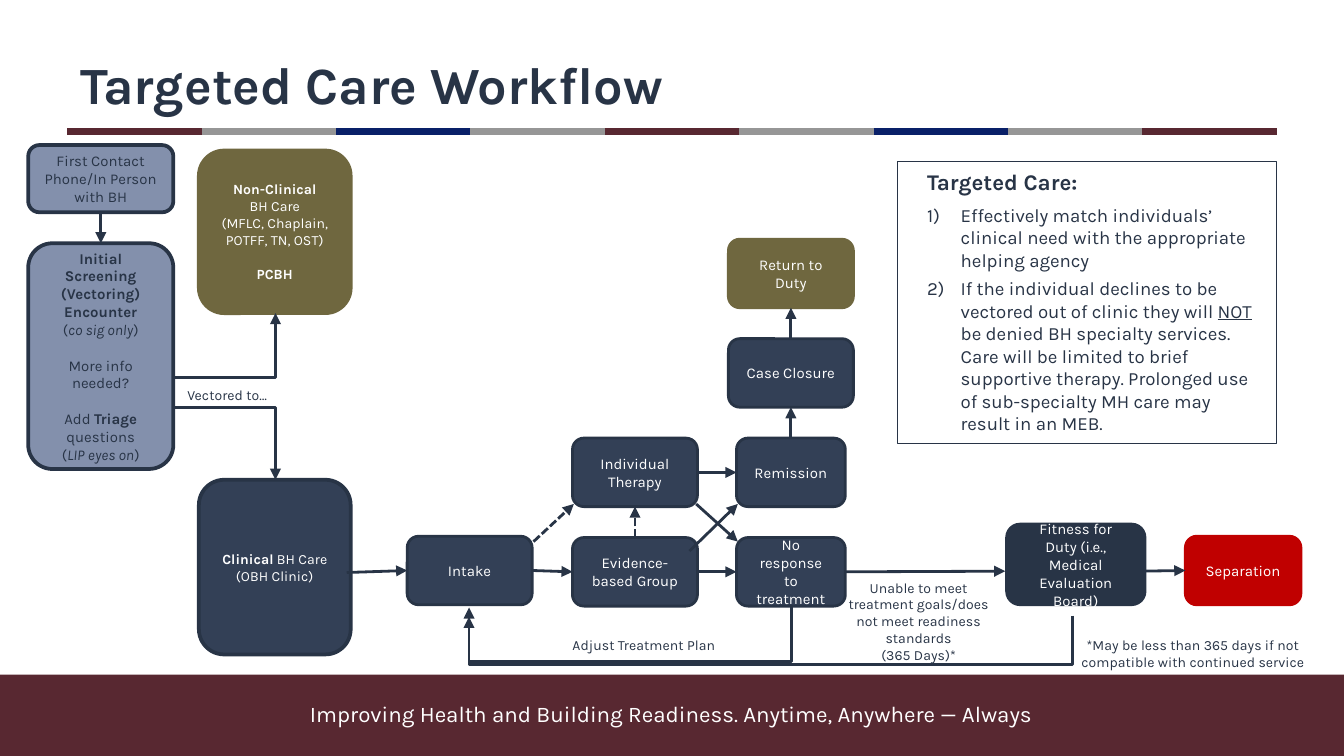
"""Build the Targeted Care Workflow slide."""
from dataclasses import dataclass, field
from itertools import cycle, islice
from typing import Any, Optional, Union

from lxml.etree import SubElement
from pptx import Presentation
from pptx.dml.color import RGBColor
from pptx.enum.dml import MSO_LINE
from pptx.enum.shapes import MSO_CONNECTOR, MSO_SHAPE
from pptx.enum.text import MSO_ANCHOR, PP_ALIGN
from pptx.oxml.ns import qn
from pptx.util import Pt

PX = 9144
FONT = "Karla"
WHITE, INK, NAVY, STEEL = "FFFFFF", "283446", "334056", "8390AC"
OLIVE, MAROON, GRAY, BLUE, RED = "6F673F", "582831", "969696", "092068", "C00000"
TOP, LEFT, BOTTOM, RIGHT = range(4)
BOLD, ITALIC, UNDERLINE = {"bold": True}, {"italic": True}, {"underline": True}
Rect = tuple[int, int, int, int]
Anchor = tuple[Union[str, int], int]


@dataclass
class Span:
    text: str
    style: dict[str, Any] = field(default_factory=dict)


@dataclass
class Line:
    spans: list[Span]
    gap: float = 0
    left: int = 0
    indent: int = 0
    numbered: bool = False


@dataclass
class Box:
    rect: Rect
    lines: list[Line]
    fill: Optional[str] = NAVY
    border: str = INK
    weight: float = 1.5
    color: str = WHITE
    size: float = 8
    kind: MSO_SHAPE = MSO_SHAPE.ROUNDED_RECTANGLE
    align: PP_ALIGN = PP_ALIGN.CENTER
    anchor: MSO_ANCHOR = MSO_ANCHOR.MIDDLE


@dataclass
class Arrow:
    start: Anchor
    end: Anchor
    dashed: bool = False


@dataclass
class Loop:
    start: tuple[int, int]
    end_x: int
    floor: int


def rgb(value: str) -> RGBColor:
    return RGBColor.from_string(value)


def px(*values: float) -> list[int]:
    return [round(value * PX) for value in values]


def plain(*texts: str) -> list[Line]:
    return [Line([Span(text)]) for text in texts]


def write(frame, lines: list[Line], size: float, color: str, align: PP_ALIGN, anchor: MSO_ANCHOR) -> None:
    for key, value in {"word_wrap": True, "vertical_anchor": anchor}.items():
        setattr(frame, key, value)
    for index, line in enumerate(lines):
        paragraph = frame.add_paragraph() if index else frame.paragraphs[0]
        props = paragraph._p.get_or_add_pPr()
        if line.left:
            left, indent = px(line.left, line.indent)
            props.set("marL", str(left))
            props.set("indent", str(indent))
        if line.gap:
            paragraph.space_before = Pt(line.gap)
        if line.numbered:
            SubElement(props, qn("a:buFont"), typeface="+mj-lt")
            SubElement(props, qn("a:buAutoNum"), type="arabicParenR")
        paragraph.alignment = align
        for span in line.spans:
            run = paragraph.add_run()
            run.text = span.text
            style = {"name": FONT, "size": Pt(size), "bold": False} | span.style
            for key, value in style.items():
                setattr(run.font, key, value)
            run.font.color.rgb = rgb(color)


def draw_box(slide, box: Box):
    shape = slide.shapes.add_shape(box.kind, *px(*box.rect))
    shape.shadow.inherit = False
    if box.fill:
        shape.fill.solid()
        shape.fill.fore_color.rgb = rgb(box.fill)
    else:
        shape.fill.background()
    if box.weight:
        shape.line.color.rgb = rgb(box.border)
        shape.line.width = Pt(box.weight)
    else:
        shape.line.fill.background()
    write(shape.text_frame, box.lines, box.size, box.color, box.align, box.anchor)
    return shape


def draw_label(slide, rect: Rect, lines: list[Line], size: float = 7.5, color: str = INK) -> None:
    frame = slide.shapes.add_textbox(*px(*rect)).text_frame
    write(frame, lines, size, color, PP_ALIGN.CENTER, MSO_ANCHOR.TOP)


def style_line(connector, color: str = INK, weight: float = 1.5, head: bool = True, dashed: bool = False) -> None:
    connector.line.color.rgb = rgb(color)
    connector.line.width = Pt(weight)
    if dashed:
        connector.line.dash_style = MSO_LINE.SQUARE_DOT
    if head:
        SubElement(connector.line._get_or_add_ln(), qn("a:tailEnd"), type="triangle")
    SubElement(connector._element.spPr, qn("a:effectLst"))


def draw_arrow(slide, arrow: Arrow, steps: dict) -> None:
    points = [(0, 0) if isinstance(end[0], str) else end for end in (arrow.start, arrow.end)]
    connector = slide.shapes.add_connector(MSO_CONNECTOR.STRAIGHT, *px(*points[0], *points[1]))
    for end, join in ((arrow.start, connector.begin_connect), (arrow.end, connector.end_connect)):
        if isinstance(end[0], str):
            join(steps[end[0]], end[1])
    style_line(connector, dashed=arrow.dashed)


def draw_corner(slide, start: tuple[int, int], end: tuple[int, int]) -> None:
    connector = slide.shapes.add_connector(MSO_CONNECTOR.ELBOW, *px(*start, *end))
    connector._element.spPr.find(qn("a:prstGeom")).set("prst", "bentConnector2")
    style_line(connector)


def draw_loop(slide, loop: Loop) -> None:
    """Run down from the start, left along the floor and up, as a quarter-turned elbow one px wide."""
    x, y = loop.start
    span = x - loop.end_x
    connector = slide.shapes.add_connector(MSO_CONNECTOR.ELBOW, 0, 0, 0, 0)
    middle = (x + loop.end_x) / 2
    place = px(middle - 0.5, y + 0.5 - span / 2, 1, span)
    for key, value in zip(("left", "top", "width", "height"), place):
        setattr(connector, key, value)
    props = connector._element.spPr
    props.xfrm.set("rot", "5400000")
    guides = props.find(qn("a:prstGeom")).get_or_add_avLst()
    SubElement(guides, qn("a:gd"), name="adj1", fmla=f"val {(loop.floor - y) * 100000}")
    style_line(connector)


STEPS = {
    "non-clinical": Box((148, 112, 113, 121), [
        Line([Span("Non-Clinical", BOLD)]),
        *plain("BH Care", "(MFLC, Chaplain, POTFF, TN, OST)"),
        Line([Span("PCBH", BOLD)], gap=9.4)], OLIVE, OLIVE, 2, size=7.5),
    "contact": Box((21, 108, 108, 50), plain("First Contact", "Phone/In Person with BH"), STEEL, INK, 2, INK),
    "screening": Box((21, 181, 108, 168), [
        Line([Span("Initial Screening (Vectoring) Encounter", BOLD)]),
        Line([Span("("), Span("co sig only", ITALIC), Span(")")]),
        Line([Span("More info needed?")], gap=9.4),
        Line([Span("Add "), Span("Triage ", BOLD), Span("questions")], gap=9.4),
        Line([Span("("), Span("LIP eyes on", ITALIC), Span(")")])], STEEL, INK, 2, INK),
    "clinical": Box((148, 357, 113, 130), [
        Line([Span("Clinical", BOLD), Span(" BH Care")]), *plain("(OBH Clinic)")], weight=2, size=7.5),
    "intake": Box((303, 399, 93, 51), plain("Intake")),
    "individual": Box((426, 326, 93, 51), plain("Individual Therapy")),
    "group": Box((426, 400, 93, 51), plain("Evidence-based Group")),
    "remission": Box((548, 326, 81, 51), plain("Remission")),
    "no response": Box((548, 400, 81, 51), plain("No response to treatment")),
    "closure": Box((542, 252, 93, 51), plain("Case Closure")),
    "return": Box((542, 178, 93, 51), plain("Return to Duty"), OLIVE, OLIVE),
    "fitness": Box((749, 390, 103, 60), plain("Fitness for Duty (i.e., Medical Evaluation Board)"), INK),
    "separation": Box((882, 399, 86, 51), plain("Separation"), RED, RED),
    "summary": Box((668, 120, 282, 210), [
        Line([Span("Targeted Care:", BOLD | {"size": Pt(12)})], left=12),
        Line([Span("Effectively match individuals’ clinical need with the appropriate helping agency")],
             4.7, 37, -25, True),
        Line([Span("If the individual declines to be vectored out of clinic they will "), Span("NOT", UNDERLINE),
              Span(" be denied BH specialty services. Care will be limited to brief supportive therapy. "
                   "Prolonged use of sub-specialty MH care may result in an MEB.")], 3.5, 37, -25, True)],
        None, INK, 0.75, INK, 10, MSO_SHAPE.RECTANGLE, PP_ALIGN.LEFT, MSO_ANCHOR.TOP),
}
ARROWS = [
    Arrow(("contact", BOTTOM), ("screening", TOP)), Arrow((258, 426), ("intake", LEFT)),
    Arrow(("intake", RIGHT), ("group", LEFT)), Arrow((397, 403), (427, 375), True),
    Arrow(("group", TOP), ("individual", BOTTOM), True), Arrow(("individual", RIGHT), ("remission", LEFT)),
    Arrow(("group", RIGHT), ("no response", LEFT)), Arrow((513, 410), (549, 375)),
    Arrow((518, 375), (549, 403)), Arrow(("remission", TOP), ("closure", BOTTOM)),
    Arrow(("closure", TOP), ("return", BOTTOM)), Arrow(("no response", RIGHT), (748, 425)),
    Arrow((847, 425), ("separation", LEFT)),
]
LABELS = [
    ((390, 469, 178, 23), plain("Adjust Treatment Plan")),
    ((607, 426, 153, 61), plain("Unable to meet", "treatment goals/does", "not meet readiness standards", "(365 Days)*")),
    ((80, 283, 178, 23), plain("Vectored to…")),
    ((780, 469, 215, 35), plain("*May be less than 365 days if not compatible with continued service")),
]


def main() -> None:
    deck = Presentation()
    deck.slide_width, deck.slide_height = px(1000, 562.5)
    slide = deck.slides.add_slide(deck.slide_layouts[5])
    draw_box(slide, Box((0, 502, 1000, 61), [], MAROON, weight=0, kind=MSO_SHAPE.RECTANGLE))
    motto = plain("Improving Health and Building Readiness. Anytime, Anywhere — Always")
    draw_label(slide, (129, 516, 741, 49), motto, 12, WHITE)
    for index, color in enumerate(islice(cycle((MAROON, GRAY, BLUE, GRAY)), 9)):
        left = 50 + 100 * index
        stripe = slide.shapes.add_connector(MSO_CONNECTOR.STRAIGHT, *px(left, 98, left + 100, 98))
        style_line(stripe, color, 4, head=False)
    title = slide.shapes.title
    for key, value in zip(("left", "top", "width", "height"), px(50, 15, 900, 94)):
        setattr(title, key, value)
    heading = [Line([Span("Targeted Care Workflow", BOLD)])]
    write(title.text_frame, heading, 28, INK, PP_ALIGN.LEFT, MSO_ANCHOR.MIDDLE)
    steps = {name: draw_box(slide, box) for name, box in STEPS.items()}
    for arrow in ARROWS:
        draw_arrow(slide, arrow, steps)
    for end in ((205, 233), (205, 357)):
        draw_corner(slide, (129, 281 if end[1] < 281 else 303), end)
    for loop in (Loop((589, 451), 349, 493), Loop((798, 458), 349, 495)):
        draw_loop(slide, loop)
    for rect, lines in LABELS:
        draw_label(slide, rect, lines)
    deck.save("out.pptx")


if __name__ == "__main__":
    main()
